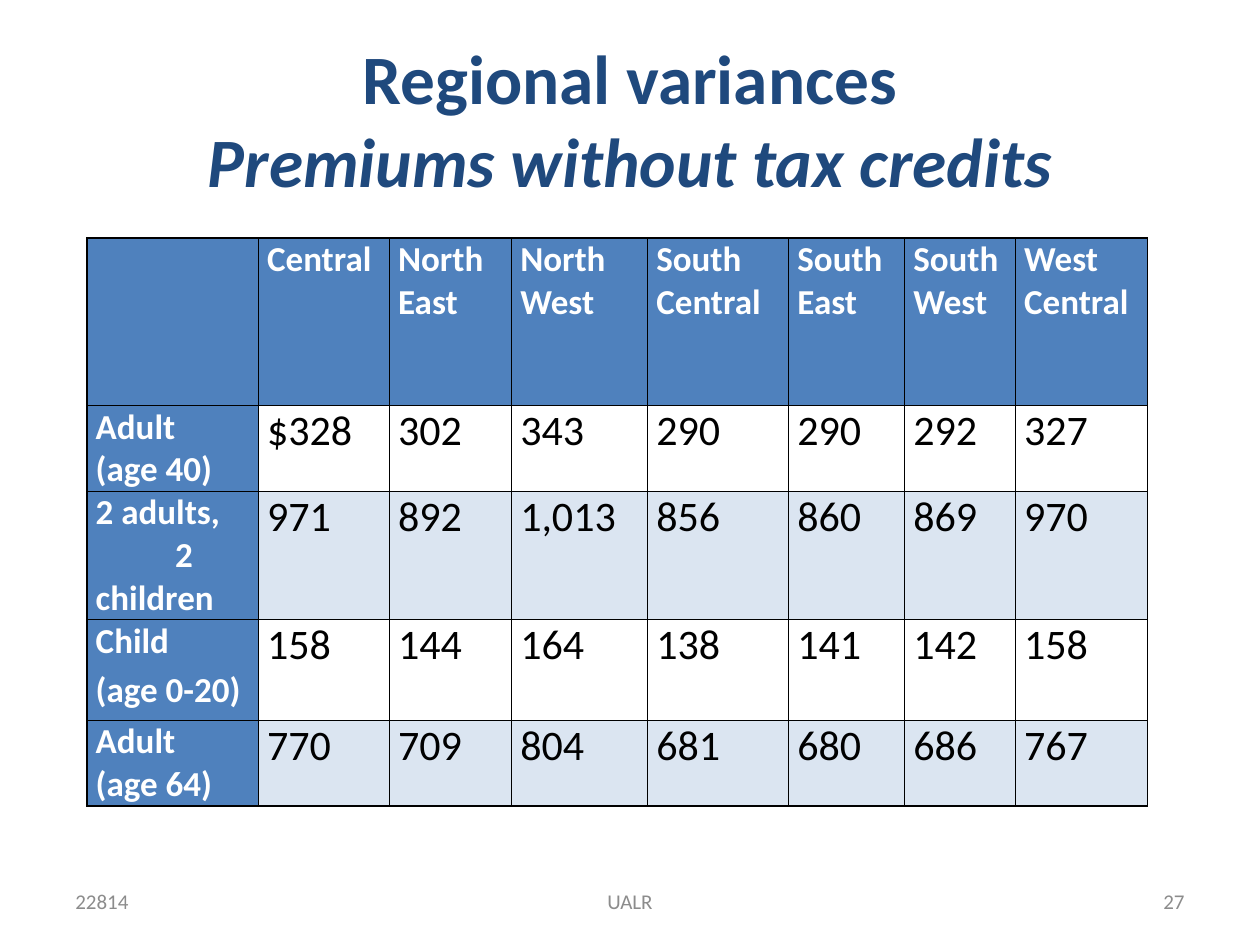
from dataclasses import dataclass

from lxml import etree
from pptx import Presentation
from pptx.dml.color import RGBColor
from pptx.enum.text import MSO_ANCHOR, PP_ALIGN
from pptx.oxml.ns import qn
from pptx.util import Inches, Pt

LEFT, CENTER, RIGHT = PP_ALIGN.LEFT, PP_ALIGN.CENTER, PP_ALIGN.RIGHT
MIDDLE = MSO_ANCHOR.MIDDLE


@dataclass(frozen=True)
class Theme:
    font: str = "Calibri"
    title: str = "1F497D"
    footer: str = "8C8C8C"
    header: str = "4F81BD"
    header_text: str = "FFFFFF"
    value_text: str = "000000"
    band: str = "DBE5F1"
    border: str = "000000"
    title_size: float = 39.6
    label_size: float = 20
    value_size: float = 24
    footer_size: float = 12
    border_width: float = 1


class SlideBuilder:
    def __init__(self, deck, theme):
        self.theme = theme
        self.width, self.height = deck.slide_width, deck.slide_height
        self.slide = deck.slides.add_slide(deck.slide_layouts[6])

    def area(self, left, top, width, height):
        """Turn shares of the slide into lengths."""
        return (round(left * self.width), round(top * self.height),
                round(width * self.width), round(height * self.height))

    def style(self, frame, size, color, bold=False, align=LEFT):
        for paragraph in frame.paragraphs:
            paragraph.alignment = align
            for run in paragraph.runs:
                run.font.name = self.theme.font
                run.font.size = Pt(size)
                run.font.bold = bold
                run.font.color.rgb = RGBColor.from_string(color)

    def text(self, words, share, size, color, bold=False, align=LEFT):
        frame = self.slide.shapes.add_textbox(*self.area(*share)).text_frame
        frame.word_wrap = True
        frame.vertical_anchor = MIDDLE
        frame.text = words
        self.style(frame, size, color, bold, align)
        return frame

    def borders(self, cell):
        properties = cell._tc.get_or_add_tcPr()
        for position, side in enumerate(("a:lnL", "a:lnR", "a:lnT", "a:lnB")):
            line = etree.Element(qn(side), w=str(Pt(self.theme.border_width)))
            fill = etree.SubElement(line, qn("a:solidFill"))
            etree.SubElement(fill, qn("a:srgbClr"), val=self.theme.border)
            properties.insert(position, line)

    def cell(self, cell, words, fill, is_label):
        theme = self.theme
        cell.margin_left = cell.margin_right = Inches(0.07)
        cell.margin_top = cell.margin_bottom = 0
        if fill:
            cell.fill.solid()
            cell.fill.fore_color.rgb = RGBColor.from_string(fill)
        else:
            cell.fill.background()
        self.borders(cell)
        cell.text_frame.text = words
        if is_label:
            self.style(cell.text_frame, theme.label_size, theme.header_text, True)
        else:
            self.style(cell.text_frame, theme.value_size, theme.value_text)

    def table(self, rows, share, column_weights, row_weights):
        left, top, width, height = self.area(*share)
        table = self.slide.shapes.add_table(
            len(rows), len(rows[0]), left, top, width, height).table
        for column, weight in zip(table.columns, column_weights):
            column.width = round(width * weight / sum(column_weights))
        for row, weight in zip(table.rows, row_weights):
            row.height = round(height * weight / sum(row_weights))
        for r, row in enumerate(rows):
            band = self.theme.band if r % 2 == 0 else None
            for c, words in enumerate(row):
                is_label = r == 0 or c == 0
                fill = self.theme.header if is_label else band
                self.cell(table.cell(r, c), words, fill, is_label)
        return table


PREMIUMS = [
    ["", "Central", "North\nEast", "North\nWest", "South Central",
     "South\nEast", "South\nWest", "West Central"],
    ["Adult\n(age 40)", "$328", "302", "343", "290", "290", "292", "327"],
    ["2 adults,\n2 children", "971", "892", "1,013", "856", "860", "869", "970"],
    ["Child\n(age 0-20)", "158", "144", "164", "138", "141", "142", "158"],
    ["Adult\n(age 64)", "770", "709", "804", "681", "680", "686", "767"],
]
REGION_WIDTHS = [1.36, 1.04, 0.97, 1.08, 1.12, 0.92, 0.88, 1.05]
GROUP_HEIGHTS = [1.33, 0.68, 1.02, 0.8, 0.68]
FOOTER = [("22814", 0.05, 0.23, LEFT), ("UALR", 0.34, 0.32, CENTER),
          ("27", 0.72, 0.23, RIGHT)]


def main():
    deck = Presentation()
    deck.slide_width, deck.slide_height = Inches(10), Inches(7.5)
    theme = Theme()
    builder = SlideBuilder(deck, theme)

    # Title with an italic second line
    title = builder.text("Regional variances\vPremiums without tax credits",
                         (0.05, 0.04, 0.9, 0.17), theme.title_size,
                         theme.title, True, CENTER)
    title.paragraphs[0].runs[1].font.italic = True

    # Premiums by household and region
    premiums = builder.table(PREMIUMS, (0.069, 0.252, 0.842, 0.601),
                             REGION_WIDTHS, GROUP_HEIGHTS)
    children = premiums.cell(2, 0).text_frame.paragraphs[1]
    children._p.get_or_add_pPr().set("indent", str(Inches(0.63)))
    child_age = premiums.cell(3, 0).text_frame.paragraphs[1]
    child_age.line_spacing = 1.15
    child_age.space_after = Pt(10)

    # Footer: date, venue, page
    for words, left, width, align in FOOTER:
        builder.text(words, (left, 0.927, width, 0.053),
                     theme.footer_size, theme.footer, align=align)

    deck.save("out.pptx")


if __name__ == "__main__":
    main()
